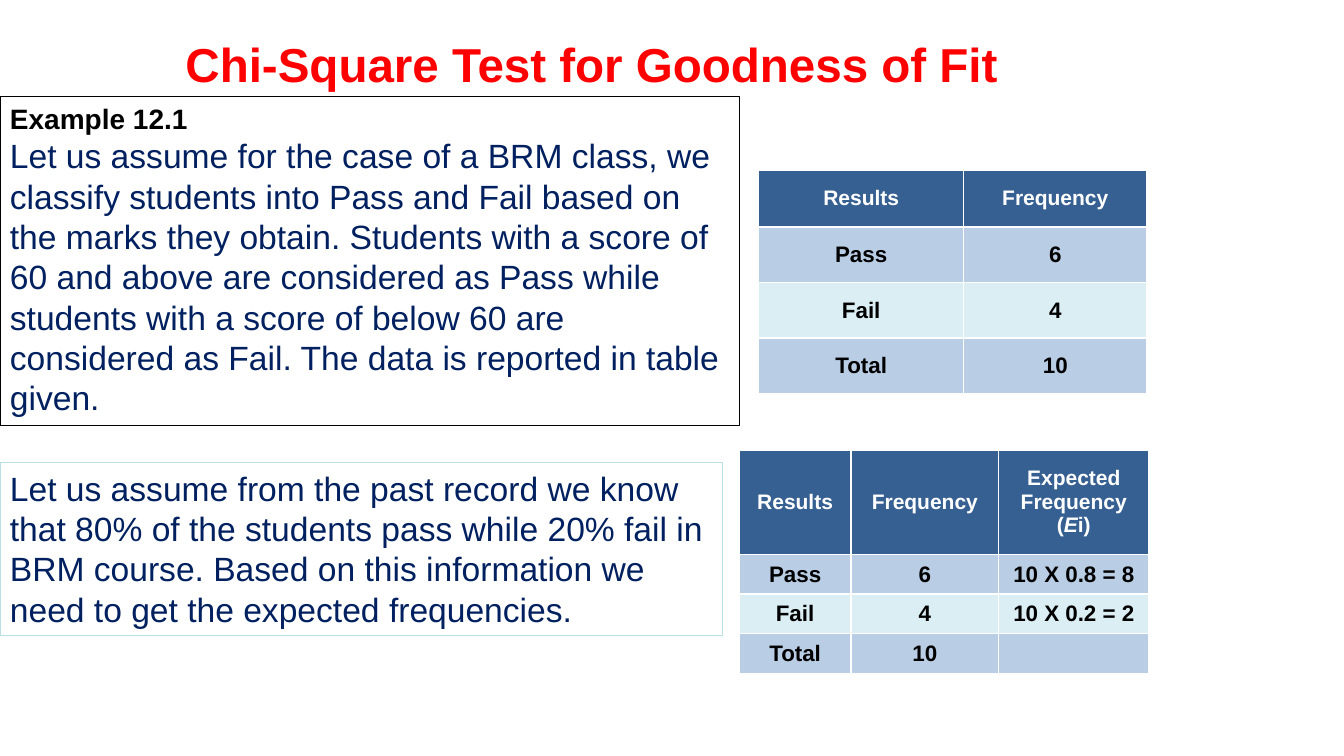
from lxml import etree
from pptx import Presentation
from pptx.dml.color import RGBColor
from pptx.enum.text import MSO_ANCHOR, MSO_AUTO_SIZE, PP_ALIGN
from pptx.oxml.ns import qn
from pptx.util import Pt

LEFT, CENTER = PP_ALIGN.LEFT, PP_ALIGN.CENTER
TOP, MIDDLE = MSO_ANCHOR.TOP, MSO_ANCHOR.MIDDLE
NO_AUTOFIT = MSO_AUTO_SIZE.NONE
TITLE_ONLY = 5
FONT = "Arial"
COLORS = {
    "title": "FF0000",
    "body": "002060",
    "black": "000000",
    "white": "FFFFFF",
    "pale_line": "BBE0E3",
    "header": "376092",
    "odd_row": "B9CDE5",
    "even_row": "DBEEF4",
}

TITLE = "Chi-Square Test for Goodness of Fit"
TITLE_BOX = (125.3, 21.6, 694.8, 44.6)

EXAMPLE_HEADING = "Example 12.1"
EXAMPLE = (
    "Let us assume for the case of a BRM class, we classify students into Pass "
    "and Fail based on the marks they obtain. Students with a score of 60 and "
    "above are considered as Pass while students with a score of below 60 are "
    "considered as Fail. The data is reported in table given."
)
EXPECTATION = (
    "Let us assume from the past record we know that 80% of the students pass "
    "while 20% fail in BRM course. Based on this information we need to get the "
    "expected frequencies."
)
HEADING_FORMAT = {"size": 20, "bold": True, "color": "black"}
BODY_FORMAT = {"size": 24, "color": "body"}
TEXT_BOXES = [
    {
        "box": (0, 69, 528, 234.8),
        "line": "black",
        "paragraphs": [(EXAMPLE_HEADING, HEADING_FORMAT), (EXAMPLE, BODY_FORMAT)],
    },
    {
        "box": (0, 330.4, 516, 123.8),
        "line": "pale_line",
        "paragraphs": [(EXPECTATION, BODY_FORMAT)],
    },
]

# A cell given as a list holds (text, italic) runs.
EXPECTED_HEADER = [("Expected Frequency (", False), ("E", True), ("i)", False)]
TABLES = [
    {
        "position": (542, 120.6),
        "columns": [146.3, 131],
        "header_height": 41.5,
        "row_height": 39.7,
        "rows": [
            ("Results", "Frequency"),
            ("Pass", "6"),
            ("Fail", "4"),
            ("Total", "10"),
        ],
    },
    {
        "position": (528, 320.6),
        "columns": [79.9, 105.5, 107.3],
        "header_height": 75.6,
        "row_height": 28.1,
        "rows": [
            ("Results", "Frequency", EXPECTED_HEADER),
            ("Pass", "6", "10 X 0.8 = 8"),
            ("Fail", "4", "10 X 0.2 = 2"),
            ("Total", "10", ""),
        ],
    },
]


def rgb(name):
    return RGBColor.from_string(COLORS[name])


def write(paragraph, text, *, size, color, bold=False, align=LEFT):
    """Fill a paragraph from a string or a list of (text, italic) runs."""
    paragraph.alignment = align
    runs = [(text, False)] if isinstance(text, str) else text
    for part, italic in runs:
        run = paragraph.add_run()
        run.text = part
        run.font.name = FONT
        run.font.size = Pt(size)
        run.font.bold = bold
        run.font.italic = italic
        run.font.color.rgb = rgb(color)


def add_title(slide):
    title = slide.shapes.title
    title.left, title.top, title.width, title.height = map(Pt, TITLE_BOX)
    frame = title.text_frame
    frame.auto_size = NO_AUTOFIT
    frame.vertical_anchor = TOP
    write(frame.paragraphs[0], TITLE, size=34, color="title", bold=True)


def add_text_box(slide, box, line, paragraphs):
    shape = slide.shapes.add_textbox(*map(Pt, box))
    shape.line.color.rgb = rgb(line)
    shape.line.width = Pt(0.75)
    frame = shape.text_frame
    frame.word_wrap = True
    for index, (text, text_format) in enumerate(paragraphs):
        paragraph = frame.add_paragraph() if index else frame.paragraphs[0]
        write(paragraph, text, **text_format)


def add_borders(cell, top_width):
    properties = cell._tc.get_or_add_tcPr()
    for side, width in (("L", 1), ("R", 1), ("T", top_width), ("B", 1)):
        line = etree.SubElement(properties, qn(f"a:ln{side}"), w=str(Pt(width)))
        fill = etree.SubElement(line, qn("a:solidFill"))
        etree.SubElement(fill, qn("a:srgbClr"), val=COLORS["white"])


def add_frequency_table(slide, position, columns, header_height, row_height, rows):
    heights = [header_height] + [row_height] * (len(rows) - 1)
    size = (sum(columns), sum(heights))
    frame = slide.shapes.add_table(len(rows), len(columns), *map(Pt, position + size))
    table = frame.table
    table.first_row = True
    table.horz_banding = False
    for column, width in zip(table.columns, columns):
        column.width = Pt(width)
    for row_index, (row, height) in enumerate(zip(rows, heights)):
        table.rows[row_index].height = Pt(height)
        is_header = row_index == 0
        band = "odd_row" if row_index % 2 else "even_row"
        for column_index, text in enumerate(row):
            cell = table.cell(row_index, column_index)
            add_borders(cell, top_width=3 if is_header else 1)
            cell.fill.solid()
            cell.fill.fore_color.rgb = rgb("header" if is_header else band)
            cell.vertical_anchor = MIDDLE
            if text:
                write(
                    cell.text_frame.paragraphs[0],
                    text,
                    size=15 if is_header else 16,
                    color="white" if is_header else "black",
                    bold=True,
                    align=CENTER,
                )


def main():
    presentation = Presentation()
    presentation.slide_width, presentation.slide_height = Pt(960), Pt(540)
    slide = presentation.slides.add_slide(presentation.slide_layouts[TITLE_ONLY])
    add_title(slide)
    for text_box in TEXT_BOXES:
        add_text_box(slide, **text_box)
    for table in TABLES:
        add_frequency_table(slide, **table)
    presentation.save("out.pptx")


if __name__ == "__main__":
    main()
